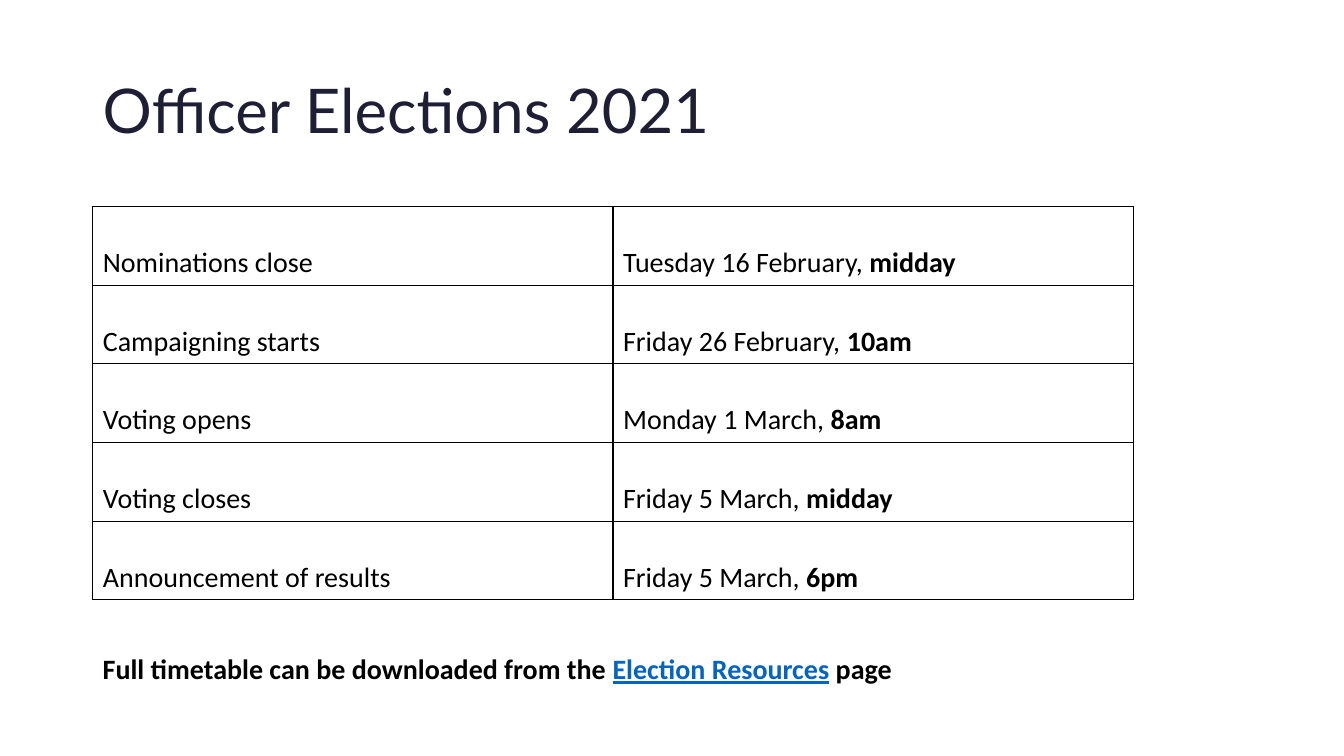
from lxml.etree import SubElement
from pptx import Presentation
from pptx.dml.color import RGBColor
from pptx.enum.text import MSO_ANCHOR as Anchor
from pptx.oxml.ns import qn
from pptx.util import Inches, Pt

BLACK = RGBColor(0x00, 0x00, 0x00)
NAVY = RGBColor(0x1E, 0x1E, 0x35)
LINK_BLUE = RGBColor(0x05, 0x63, 0xC1)
LEFT, WIDTH = Inches(0.92), Inches(10.32)
ROW_HEIGHT = Inches(0.78)

DATES = [
    ("Nominations close", "Tuesday 16 February, ", "midday"),
    ("Campaigning starts", "Friday 26 February, ", "10am"),
    ("Voting opens", "Monday 1 March, ", "8am"),
    ("Voting closes", "Friday 5 March, ", "midday"),
    ("Announcement of results", "Friday 5 March, ", "6pm"),
]


def add_text(para, text, size=20, font="Calibri", color=BLACK, bold=False,
             underline=False, spacing=2.0):
    para.line_spacing = spacing
    span = para.add_run()
    span.text = text
    span.font.size = Pt(size)
    span.font.name = font
    span.font.color.rgb = color
    span.font.bold = bold
    span.font.underline = underline


def add_borders(cell):
    properties = cell._tc.get_or_add_tcPr()
    for side in ("lnL", "lnR", "lnT", "lnB"):
        line = SubElement(properties, qn(f"a:{side}"), w=str(Pt(1)))
        fill = SubElement(line, qn("a:solidFill"))
        SubElement(fill, qn("a:srgbClr"), val=str(BLACK))


deck = Presentation()
deck.slide_width, deck.slide_height = Inches(13.33), Inches(7.5)
page = deck.slides.add_slide(deck.slide_layouts[6])

title = page.shapes.add_textbox(LEFT, Inches(0.4), WIDTH, Inches(1.45)).text_frame
title.word_wrap = True
title.vertical_anchor = Anchor.MIDDLE
add_text(title.paragraphs[0], "Officer Elections 2021", size=44, font="Lato",
         color=NAVY, spacing=0.9)

table = page.shapes.add_table(len(DATES), 2, LEFT, Inches(2.05), WIDTH,
                              ROW_HEIGHT * len(DATES)).table
table.first_row = False
table.horz_banding = False
for row, (event, day, time) in zip(table.rows, DATES):
    event_cell, date_cell = row.cells
    for cell in (event_cell, date_cell):
        cell.vertical_anchor = Anchor.MIDDLE
        add_borders(cell)
        cell.fill.background()
    add_text(event_cell.text_frame.paragraphs[0], event)
    date_para = date_cell.text_frame.paragraphs[0]
    add_text(date_para, day)
    add_text(date_para, time, bold=True)

footer = page.shapes.add_textbox(LEFT, Inches(6.08), WIDTH, Inches(0.68)).text_frame
footer.word_wrap = True
footer_para = footer.paragraphs[0]
add_text(footer_para, "Full timetable can be downloaded from the ", bold=True)
add_text(footer_para, "Election Resources", color=LINK_BLUE, bold=True, underline=True)
add_text(footer_para, " page", bold=True)

deck.save("out.pptx")
